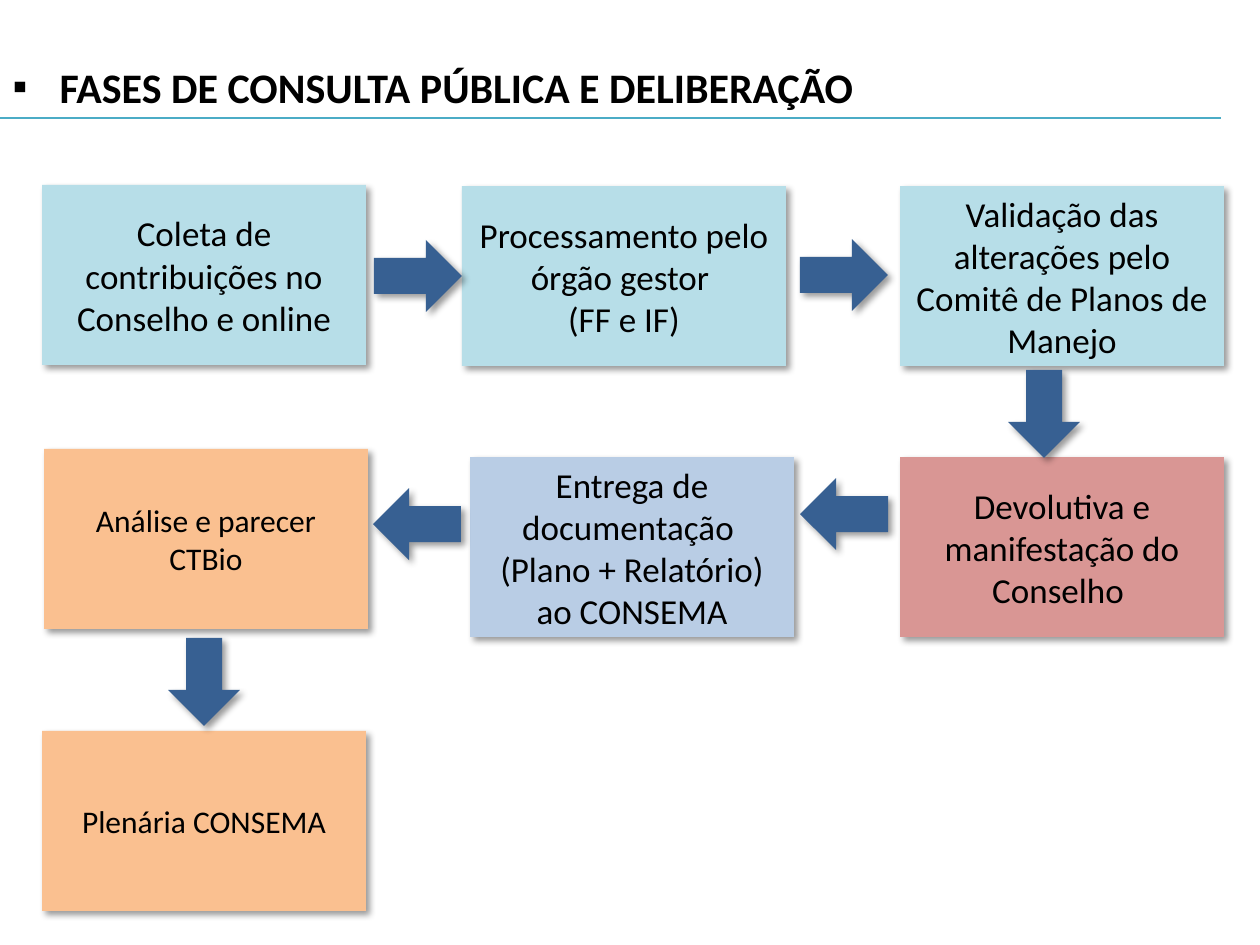
import lxml.etree
import pptx
import pptx.dml.color
import pptx.enum.shapes
import pptx.enum.text
import pptx.oxml.ns
import pptx.util

SCALE = 914400 / 126
FONT = "Calibri"
COLORS = {
    "text": "000000", "rule": "4BACC6", "arrow": "376092",
    "aqua": "B7DEE8", "rose": "D99694", "blue": "B9CDE5", "peach": "FAC090",
}
BOX = (324, 180)
ARROW = (88, 72)
RIGHT, DOWN, LEFT = 0, 90, 180

# left, top, fill, text size, paragraphs
STEPS = [
    (42, 185, "aqua", 20, ["Coleta de contribuições no Conselho e online"]),
    (462, 186, "aqua", 20, ["Processamento pelo órgão gestor ", "(FF e IF)"]),
    (900, 186, "aqua", 20,
     ["Validação das alterações pelo Comitê de Planos de Manejo"]),
    (900, 457, "rose", 20, ["Devolutiva e manifestação do Conselho "]),
    (470, 457, "blue", 20,
     ["Entrega de documentação ", "(Plano + Relatório) ao CONSEMA"]),
    (44, 449, "peach", 18, ["Análise e parecer CTBio"]),
    (42, 731, "peach", 18, ["Plenária CONSEMA"]),
]
# left, top, rotation
ARROWS = [
    (374, 240, RIGHT), (800, 239, RIGHT), (1000, 378, DOWN),
    (800, 478, LEFT), (373, 488, LEFT), (160, 646, DOWN),
]


def px(length):
    return pptx.util.Emu(round(length * SCALE))


def color(name):
    return pptx.dml.color.RGBColor.from_string(COLORS[name])


def add_child(parent, tag, **attrs):
    return lxml.etree.SubElement(parent, pptx.oxml.ns.qn(tag), attrs)


def format_text(frame, size, align, bold=False):
    for para in frame.paragraphs:
        para.alignment = align
        for run in para.runs:
            run.font.name = FONT
            run.font.size = pptx.util.Pt(size)
            run.font.bold = bold
            run.font.color.rgb = color("text")


def add_title(slide, text):
    title = slide.shapes.title
    title.left, title.top, title.width, title.height = map(px, (0, 55, 1260, 63))
    frame = title.text_frame
    frame.text = text
    frame.word_wrap = True
    frame.auto_size = pptx.enum.text.MSO_AUTO_SIZE.NONE
    frame.vertical_anchor = pptx.enum.text.MSO_ANCHOR.MIDDLE
    format_text(frame, 24, pptx.enum.text.PP_ALIGN.LEFT, bold=True)
    props = frame.paragraphs[0]._p.get_or_add_pPr()
    indent = px(47)
    props.set("marL", str(indent))
    props.set("indent", str(-indent))
    add_child(props, "a:buFont", typeface="Arial")
    add_child(props, "a:buChar", char="▪")


def add_rule(slide):
    line = slide.shapes.add_connector(
        pptx.enum.shapes.MSO_CONNECTOR.STRAIGHT, px(0), px(118), px(1221), px(118))
    line.line.color.rgb = color("rule")
    line.line.width = pptx.util.Pt(0.75)
    add_child(line._element.spPr, "a:effectLst")


def add_block(slide, kind, left, top, size, fill):
    """Add a borderless filled shape with a soft shadow at lower right."""
    shape = slide.shapes.add_shape(kind, px(left), px(top), *map(px, size))
    shape.fill.solid()
    shape.fill.fore_color.rgb = color(fill)
    shape.line.fill.background()
    shape.shadow.inherit = False
    effects = shape._element.spPr.find(pptx.oxml.ns.qn("a:effectLst"))
    shadow = add_child(
        effects, "a:outerShdw", blurRad=str(pptx.util.Pt(4)),
        dist=str(pptx.util.Pt(3)), dir=str(45 * 60000), algn="tl", rotWithShape="0")
    tint = add_child(shadow, "a:srgbClr", val="000000")
    add_child(tint, "a:alpha", val="40000")
    return shape


def add_step(slide, left, top, fill, size, lines):
    kind = pptx.enum.shapes.MSO_SHAPE.RECTANGLE
    frame = add_block(slide, kind, left, top, BOX, fill).text_frame
    frame.text = "\n".join(lines)
    frame.word_wrap = True
    frame.vertical_anchor = pptx.enum.text.MSO_ANCHOR.MIDDLE
    format_text(frame, size, pptx.enum.text.PP_ALIGN.CENTER)


def add_arrow(slide, left, top, angle):
    kind = pptx.enum.shapes.MSO_SHAPE.RIGHT_ARROW
    add_block(slide, kind, left, top, ARROW, "arrow").rotation = angle


def main():
    deck = pptx.Presentation()
    deck.slide_width, deck.slide_height = px(1260), px(945)
    slide = deck.slides.add_slide(deck.slide_layouts[5])
    add_title(slide, "FASES DE CONSULTA PÚBLICA E DELIBERAÇÃO")
    add_rule(slide)
    for step in STEPS:
        add_step(slide, *step)
    for arrow in ARROWS:
        add_arrow(slide, *arrow)
    deck.save("out.pptx")


if __name__ == "__main__":
    main()
